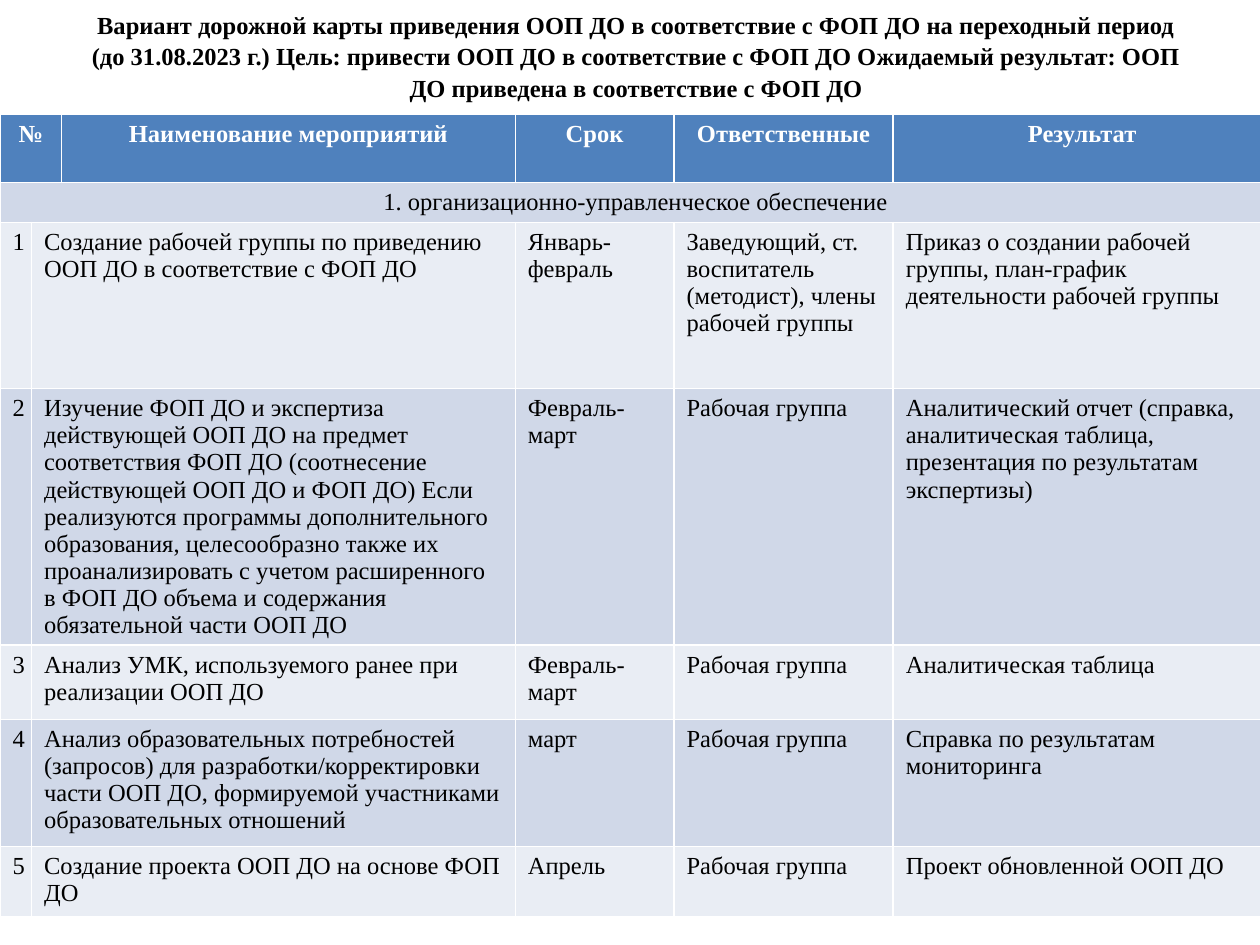
from dataclasses import dataclass

from pptx import Presentation
from pptx import util as u
from pptx.dml.color import RGBColor
from pptx.enum import text


@dataclass(frozen=True)
class Theme:
    font: str = "Times New Roman"
    size: int = 14
    ink: str = "000000"
    header_ink: str = "FFFFFF"
    header_fill: str = "4F81BD"
    band_dark: str = "D0D8E8"
    band_light: str = "E9EDF4"


theme = Theme()


def write(frame, wording, color=theme.ink, bold=False, align=text.PP_ALIGN.LEFT, spacing=None):
    paragraph = frame.paragraphs[0]
    paragraph.alignment = align
    paragraph.line_spacing = spacing
    run = paragraph.add_run()
    run.text = wording
    run.font.name = theme.font
    run.font.size = u.Pt(theme.size)
    run.font.bold = bold
    run.font.color.rgb = RGBColor.from_string(color)


headings = ["№", "Наименование мероприятий", "Срок", "Ответственные", "Результат"]
section = "1. организационно-управленческое обеспечение"
group = "Рабочая группа"
activities = [
    ("Создание рабочей группы по приведению ООП ДО в соответствие с ФОП ДО",
     "Январь-февраль",
     "Заведующий, ст. воспитатель (методист), члены рабочей группы",
     "Приказ о создании рабочей группы, план-график деятельности рабочей группы"),
    ("Изучение ФОП ДО и экспертиза действующей ООП ДО на предмет соответствия ФОП ДО "
     "(соотнесение действующей ООП ДО и ФОП ДО) Если реализуются программы дополнительного "
     "образования, целесообразно также их проанализировать с учетом расширенного в ФОП ДО "
     "объема и содержания обязательной части ООП ДО",
     "Февраль-март", group,
     "Аналитический отчет (справка, аналитическая таблица, презентация по результатам экспертизы)"),
    ("Анализ УМК, используемого ранее при реализации ООП ДО",
     "Февраль-март", group, "Аналитическая таблица"),
    ("Анализ образовательных потребностей (запросов) для разработки/корректировки "
     "части ООП ДО, формируемой участниками образовательных отношений",
     "март", group, "Справка по результатам мониторинга"),
    ("Создание проекта ООП ДО на основе ФОП ДО",
     "Апрель", group, "Проект обновленной ООП ДО"),
]
column_widths = [0.25, 0.15, 3.6, 1.26, 1.74, 3]
row_heights = [0.54, 0.31, 1.32, 1.98, 0.59, 1.01, 0.56]

deck = Presentation()
deck.slide_width, deck.slide_height = u.Inches(10), u.Inches(7.5)
slide = deck.slides.add_slide(deck.slide_layouts[5])

goal = slide.shapes.title
goal.left, goal.top = u.Inches(0.55), 0
goal.width, goal.height = u.Inches(9), u.Inches(0.87)
goal.text_frame.word_wrap = True
goal.text_frame.auto_size = text.MSO_AUTO_SIZE.NONE
goal.text_frame.vertical_anchor = text.MSO_ANCHOR.MIDDLE
write(goal.text_frame,
      "Вариант дорожной карты приведения ООП ДО в соответствие с ФОП ДО на переходный период "
      "(до 31.08.2023 г.) Цель: привести ООП ДО в соответствие с ФОП ДО "
      "Ожидаемый результат: ООП ДО приведена в соответствие с ФОП ДО",
      bold=True, align=text.PP_ALIGN.CENTER, spacing=1.08)

roadmap = slide.shapes.add_table(
    len(row_heights), len(column_widths), 0, u.Inches(0.91),
    deck.slide_width, u.Inches(sum(row_heights))).table
for column, width in zip(roadmap.columns, column_widths):
    column.width = u.Inches(width)
for row, height in zip(roadmap.rows, row_heights):
    row.height = u.Inches(height)

# The number spans two columns in the header; the activity name does below it.
header_starts = [0, 2, 3, 4, 5]
activity_starts = [0, 1, 3, 4, 5]
lines = [(header_starts, headings), ([0], [section])]
lines += [(activity_starts, [str(number), *activity])
          for number, activity in enumerate(activities, 1)]

for row, (starts, wordings) in enumerate(lines):
    is_header = row == 0
    band = theme.band_dark if row % 2 else theme.band_light
    fill = theme.header_fill if is_header else band
    for column in range(len(column_widths)):
        cell = roadmap.cell(row, column)
        cell.fill.solid()
        cell.fill.fore_color.rgb = RGBColor.from_string(fill)
    ends = starts[1:] + [len(column_widths)]
    for start, end, wording in zip(starts, ends, wordings):
        cell = roadmap.cell(row, start)
        if end - start > 1:
            cell.merge(roadmap.cell(row, end - 1))
        write(cell.text_frame, wording,
              color=theme.header_ink if is_header else theme.ink, bold=is_header,
              align=text.PP_ALIGN.CENTER if row < 2 else text.PP_ALIGN.LEFT)

deck.save("out.pptx")
